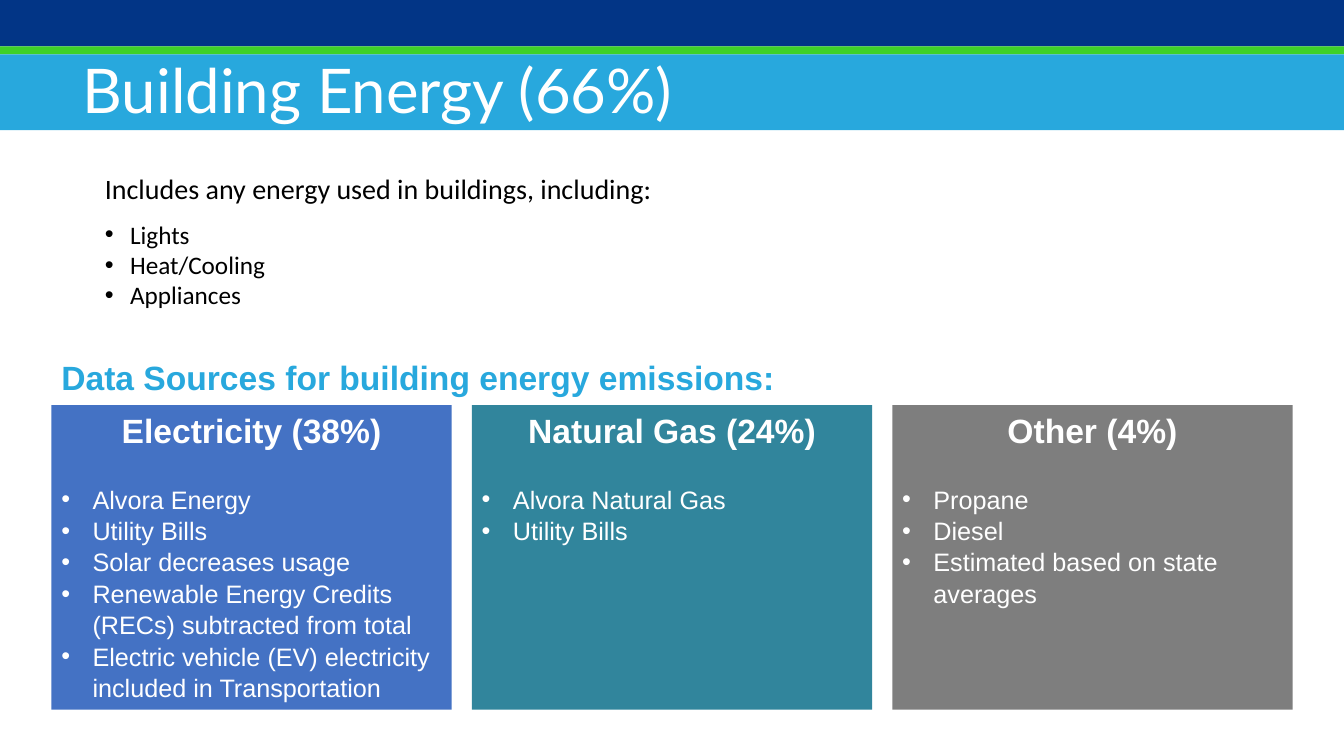
from lxml.etree import SubElement
from pptx import Presentation
from pptx.dml.color import RGBColor
from pptx.enum.shapes import MSO_SHAPE
from pptx.enum.text import MSO_ANCHOR, MSO_AUTO_SIZE, PP_ALIGN
from pptx.oxml.ns import qn
from pptx.util import Inches, Pt

# Content
TITLE = "Building Energy (66%)"
INTRO = "Includes any energy used in buildings, including:"
USES = ["Lights", "Heat/Cooling", "Appliances"]
SOURCES_HEADING = "Data Sources for building energy emissions:"
SOURCES = [
    ("Electricity (38%)", "4472C4", [
        "Alvora Energy",
        "Utility Bills",
        "Solar decreases usage",
        "Renewable Energy Credits (RECs) subtracted from total",
        "Electric vehicle (EV) electricity included in Transportation",
    ]),
    ("Natural Gas (24%)", "31859C", ["Alvora Natural Gas", "Utility Bills"]),
    ("Other (4%)", "7E7E7E", [
        "Propane", "Diesel", "Estimated based on state averages",
    ]),
]
BANDS = [(0.46, "023586"), (0.08, "3ED128"), (0.75, "28A8DD")]  # height, colour

# Layout in inches
SLIDE_WIDTH, SLIDE_HEIGHT = 13.33, 7.5
CARD_LEFT, CARD_TOP, CARD_WIDTH, CARD_HEIGHT, CARD_GAP = 0.51, 4.02, 3.97, 3.02, 0.2


def color(hex_value):
    return RGBColor.from_string(hex_value)


def place(shape, left, top, width, height):
    shape.left, shape.top = Inches(left), Inches(top)
    shape.width, shape.height = Inches(width), Inches(height)


def prepare_frame(shape, anchor):
    frame = shape.text_frame
    frame.word_wrap = True
    frame.auto_size = MSO_AUTO_SIZE.NONE
    frame.vertical_anchor = anchor
    return frame


def add_rectangle(slide, left, top, width, height, fill):
    shape = slide.shapes.add_shape(
        MSO_SHAPE.RECTANGLE, Inches(left), Inches(top), Inches(width), Inches(height))
    shape.shadow.inherit = False
    shape.fill.solid()
    shape.fill.fore_color.rgb = color(fill)
    shape.line.fill.background()
    return shape


def format_paragraph(paragraph, size, font_name, hex_value, bold=False,
                     align=PP_ALIGN.LEFT, after=0, spacing=1.0):
    paragraph.alignment = align
    paragraph.space_before = Pt(0)
    paragraph.space_after = Pt(after)
    paragraph.line_spacing = spacing
    for run in paragraph.runs:
        run.font.size = Pt(size)
        run.font.name = font_name
        run.font.bold = bold
        run.font.color.rgb = color(hex_value)


def set_bullet(paragraph, indent):
    """Hang a bullet by the indent; an indent of 0 removes the bullet."""
    properties = paragraph._p.get_or_add_pPr()
    properties.set("marL", str(Inches(indent)))
    properties.set("indent", str(-Inches(indent)))
    if indent:
        SubElement(properties, qn("a:buFont")).set("typeface", "Arial")
        SubElement(properties, qn("a:buChar")).set("char", "•")
    else:
        SubElement(properties, qn("a:buNone"))


def add_bullets(frame, items, indent, **style):
    for item in items:
        paragraph = frame.add_paragraph()
        paragraph.text = item
        format_paragraph(paragraph, 18, **style)
        set_bullet(paragraph, indent)


def add_header(slide):
    top = 0
    for height, fill in BANDS:
        add_rectangle(slide, 0, top, SLIDE_WIDTH, height, fill)
        top += height
    title = slide.shapes.title
    place(title, 0.72, 0.46, 12.04, 0.84)
    frame = prepare_frame(title, MSO_ANCHOR.MIDDLE)
    frame.text = TITLE
    format_paragraph(frame.paragraphs[0], 44, "Lato", "FFFFFF")
    # Bring the title in front of the bands
    title.element.getparent().append(title.element)


def add_intro(slide):
    body = slide.placeholders[1]
    place(body, 0.94, 1.65, 11.4, 1.56)
    frame = prepare_frame(body, MSO_ANCHOR.TOP)
    frame.text = INTRO
    format_paragraph(frame.paragraphs[0], 20, "Calibri", "000000", after=10)
    set_bullet(frame.paragraphs[0], 0)
    add_bullets(frame, USES, 0.25, font_name="Calibri", hex_value="000000")


def add_sources(slide):
    heading = slide.shapes.add_textbox(
        Inches(CARD_LEFT), Inches(3.48), Inches(11.82), Inches(0.52))
    frame = prepare_frame(heading, MSO_ANCHOR.MIDDLE)
    frame.text = SOURCES_HEADING
    format_paragraph(frame.paragraphs[0], 24, "Arial", "28A8DD", bold=True)

    for index, (name, fill, items) in enumerate(SOURCES):
        left = CARD_LEFT + index * (CARD_WIDTH + CARD_GAP)
        card = add_rectangle(slide, left, CARD_TOP, CARD_WIDTH, CARD_HEIGHT, fill)
        frame = prepare_frame(card, MSO_ANCHOR.TOP)
        frame.text = name
        format_paragraph(frame.paragraphs[0], 24, "Arial", "FFFFFF", bold=True,
                         align=PP_ALIGN.CENTER, after=23)
        add_bullets(frame, items, 0.31, font_name="Arial", hex_value="FFFFFF",
                    spacing=1.04)


def main():
    presentation = Presentation()
    presentation.slide_width = Inches(SLIDE_WIDTH)
    presentation.slide_height = Inches(SLIDE_HEIGHT)
    slide = presentation.slides.add_slide(presentation.slide_layouts[1])
    add_intro(slide)
    add_sources(slide)
    add_header(slide)
    presentation.save("out.pptx")


if __name__ == "__main__":
    main()
